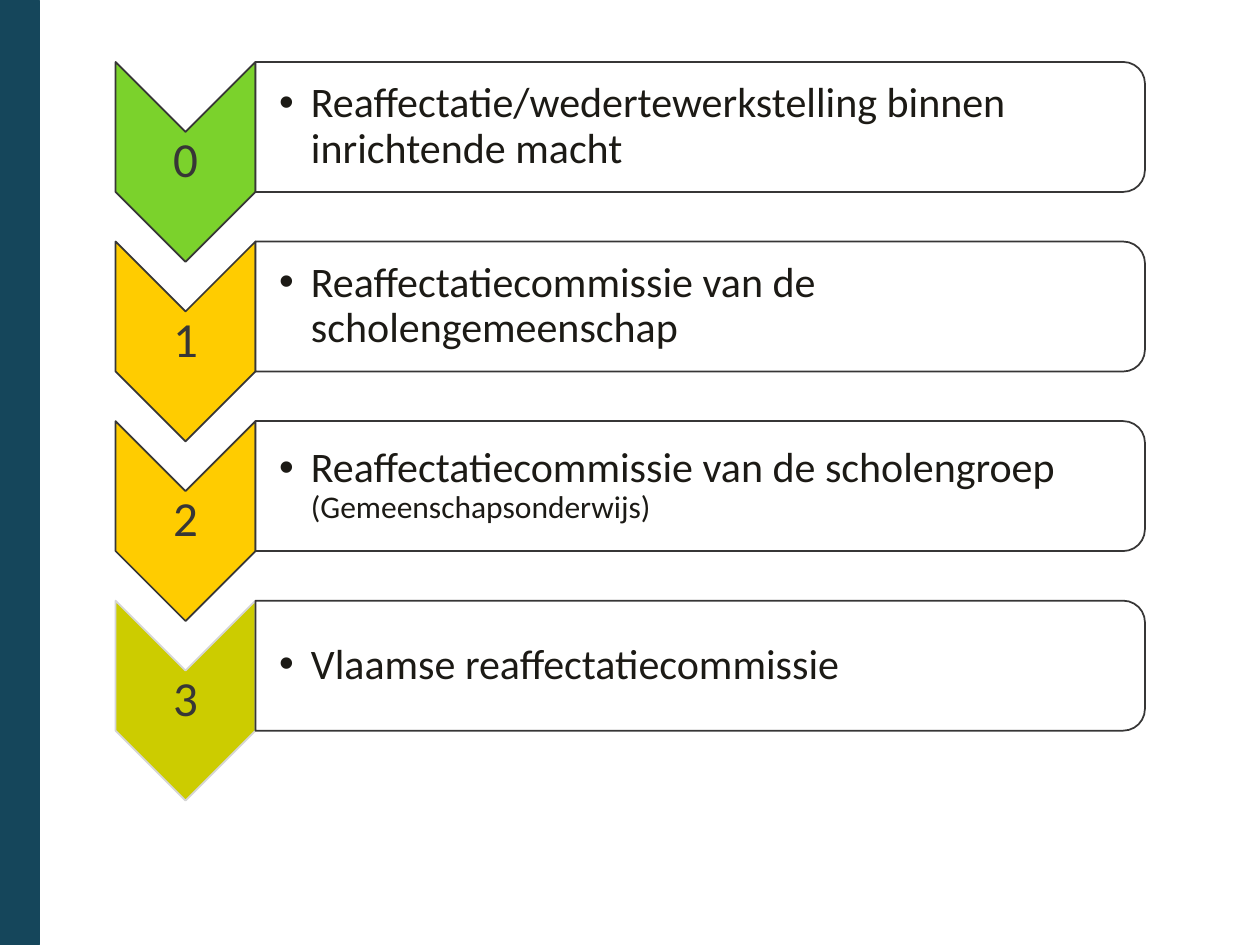
from lxml import etree
from pptx import Presentation
from pptx.dml.color import RGBColor
from pptx.enum import shapes, text
from pptx.oxml.ns import qn
from pptx.util import Cm, Pt

FONT = "Calibri"
WHITE = RGBColor(0xFF, 0xFF, 0xFF)
PETROL = RGBColor(0x15, 0x46, 0x5B)
GREEN = RGBColor(0x7B, 0xD2, 0x2C)
YELLOW = RGBColor(0xFF, 0xCC, 0x00)
OLIVE = RGBColor(0xCC, 0xCC, 0x00)
DARK = RGBColor(0x37, 0x36, 0x36)
LIGHT = RGBColor(0xD5, 0xD5, 0xD5)
INK = RGBColor(0x1C, 0x1A, 0x15)

# Chevron fill, chevron outline, text runs with their sizes
STEPS = [
    (GREEN, DARK, [("Reaffectatie/wedertewerkstelling binnen inrichtende macht", 24)]),
    (YELLOW, DARK, [("Reaffectatiecommissie van de scholengemeenschap", 24)]),
    (YELLOW, DARK, [("Reaffectatiecommissie van de scholengroep ", 24),
                    ("(Gemeenschapsonderwijs)", 18)]),
    (OLIVE, LIGHT, [("Vlaamse reaffectatiecommissie", 24)]),
]
STEP_PITCH = 3.62
CHEVRON_WIDTH, CHEVRON_HEIGHT = 2.82, 4.03
CARD_HEIGHT = 2.62


def add_filled_shape(slide, kind, left, top, width, height, fill, line, weight=1):
    shape = slide.shapes.add_shape(kind, Cm(left), Cm(top), Cm(width), Cm(height))
    shape.shadow.inherit = False
    shape.fill.solid()
    shape.fill.fore_color.rgb = fill
    shape.line.color.rgb = line
    shape.line.width = Pt(weight)
    return shape


def add_turned_shape(slide, kind, left, top, width, height, fill, line):
    """Add a shape turned by 90 degrees that covers the given box."""
    offset = (width - height) / 2
    shape = add_filled_shape(slide, kind, left + offset, top - offset,
                             height, width, fill, line)
    shape.rotation = 90
    return shape


def add_label(slide, left, top, width, height, runs, color, inset=0.05, bullet=False):
    frame = slide.shapes.add_textbox(Cm(left), Cm(top), Cm(width), Cm(height)).text_frame
    frame.word_wrap = True
    frame.vertical_anchor = text.MSO_ANCHOR.MIDDLE
    frame.margin_left = Cm(inset)
    frame.margin_top = frame.margin_right = frame.margin_bottom = Cm(0.05)
    paragraph = frame.paragraphs[0]
    paragraph.line_spacing = 0.9
    if bullet:
        properties = paragraph._p.get_or_add_pPr()
        properties.set("marL", str(Cm(0.64)))
        properties.set("indent", str(-Cm(0.64)))
        etree.SubElement(properties, qn("a:buFont")).set("typeface", "Arial")
        etree.SubElement(properties, qn("a:buChar")).set("char", "•")
    else:
        paragraph.alignment = text.PP_ALIGN.CENTER
    for words, size in runs:
        run = paragraph.add_run()
        run.text = words
        run.font.name = FONT
        run.font.size = Pt(size)
        run.font.color.rgb = color


def add_step(slide, left, top, width, number, fill, line, runs):
    # Chevron with its number below the notch
    add_turned_shape(slide, shapes.MSO_SHAPE.CHEVRON, left, top,
                     CHEVRON_WIDTH, CHEVRON_HEIGHT, fill, line)
    notch = CHEVRON_WIDTH / 2
    add_label(slide, left, top + notch, CHEVRON_WIDTH, CHEVRON_HEIGHT - 2 * notch,
              [(str(number), 28)], DARK)

    # Card with its bulleted text
    card_left, card_width = left + CHEVRON_WIDTH, width - CHEVRON_WIDTH
    card = add_turned_shape(slide, shapes.MSO_SHAPE.ROUND_2_SAME_RECTANGLE, card_left, top,
                            card_width, CARD_HEIGHT, WHITE, DARK)
    color = card._element.spPr.find(qn("a:solidFill"))[0]
    etree.SubElement(color, qn("a:alpha")).set("val", "90000")
    add_label(slide, card_left, top + 0.13, card_width - 0.13, CARD_HEIGHT - 0.26,
              runs, INK, inset=0.48, bullet=True)


def main():
    presentation = Presentation()
    presentation.slide_width, presentation.slide_height = Cm(25.4), Cm(19.05)
    slide = presentation.slides.add_slide(presentation.slide_layouts[6])

    # Side band
    add_filled_shape(slide, shapes.MSO_SHAPE.RECTANGLE, 0, 0, 0.79, 19.05,
                     PETROL, PETROL, 0.5)

    # Steps
    for number, (fill, line, runs) in enumerate(STEPS):
        add_step(slide, 2.33, 1.25 + number * STEP_PITCH, 20.75, number, fill, line, runs)

    presentation.save("out.pptx")


if __name__ == "__main__":
    main()
